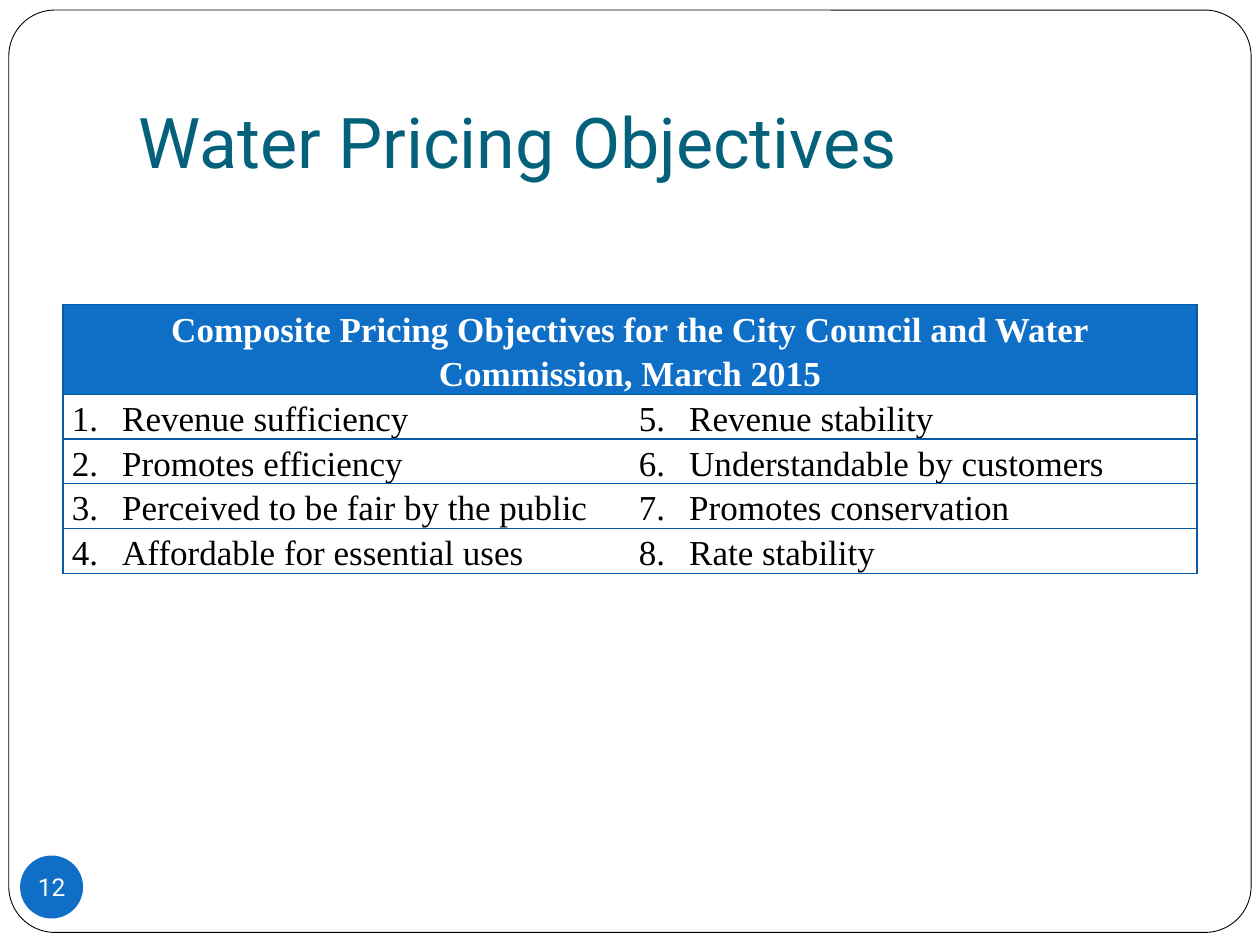
from lxml.etree import SubElement
from pptx import Presentation
from pptx.dml.color import RGBColor
from pptx.enum.shapes import MSO_SHAPE
from pptx.enum.text import MSO_ANCHOR, MSO_AUTO_SIZE, PP_ALIGN
from pptx.oxml.ns import qn
from pptx.util import Inches, Pt

BLUE, BORDER, TEAL, WHITE, BLACK = "0F6FC6", "0559A6", "04617B", "FFFFFF", "000000"
SANS, SERIF = "Roboto", "Times New Roman"
ROW_HEIGHT = 0.355
NUMBER_INDENT = 0.4
HEADING = "Composite Pricing Objectives for the City Council and Water Commission, March 2015"
OBJECTIVES = [
    ["Revenue sufficiency", "Promotes efficiency",
     "Perceived to be fair by the public", "Affordable for essential uses"],
    ["Revenue stability", "Understandable by customers",
     "Promotes conservation", "Rate stability"],
]


def color(hex_string):
    return RGBColor.from_string(hex_string)


def add_run(paragraph, text, font, size, hex_string, bold=False):
    run = paragraph.add_run()
    run.text = text
    run.font.name = font
    run.font.size = Pt(size)
    run.font.bold = bold
    run.font.color.rgb = color(hex_string)


def set_margins(target, left, top, right, bottom):
    """Set the inner margins of a text frame or a table cell, in inches."""
    target.margin_left, target.margin_top = Inches(left), Inches(top)
    target.margin_right, target.margin_bottom = Inches(right), Inches(bottom)


def add_filled_shape(slide, kind, box, fill):
    shape = slide.shapes.add_shape(kind, *map(Inches, box))
    shape.shadow.inherit = False
    shape.fill.solid()
    shape.fill.fore_color.rgb = color(fill)
    return shape


def add_frame(slide, box):
    """Draw the rounded page border behind the title."""
    frame = add_filled_shape(slide, MSO_SHAPE.ROUNDED_RECTANGLE, box, WHITE)
    frame.adjustments[0] = 0.05
    frame.line.color.rgb = color(BLACK)
    frame.line.width = Pt(0.5)
    slide.shapes.title.element.addprevious(frame.element)


def place_title(slide, box, text):
    title = slide.shapes.title
    title.left, title.top, title.width, title.height = map(Inches, box)
    text_frame = title.text_frame
    text_frame.auto_size = MSO_AUTO_SIZE.NONE
    text_frame.word_wrap = True
    text_frame.vertical_anchor = MSO_ANCHOR.BOTTOM
    set_margins(text_frame, 0.1, 0.05, 0.1, 0.1)
    paragraph = text_frame.paragraphs[0]
    paragraph.alignment = PP_ALIGN.LEFT
    add_run(paragraph, text, SANS, 40, TEAL)


def set_borders(cell, visible_sides):
    properties = cell._tc.get_or_add_tcPr()
    for side in "LRTB":
        line = SubElement(properties, qn(f"a:ln{side}"), w=str(Pt(0.75)))
        if side in visible_sides:
            fill = SubElement(line, qn("a:solidFill"))
            SubElement(fill, qn("a:srgbClr"), val=BORDER)
        else:
            SubElement(line, qn("a:noFill"))


def number_paragraph(paragraph, number):
    """Give the paragraph an automatic number and a hanging indent."""
    properties = paragraph._p.get_or_add_pPr()
    properties.set("marL", str(Inches(NUMBER_INDENT)))
    properties.set("indent", str(-Inches(NUMBER_INDENT)))
    SubElement(properties, qn("a:buFont"), typeface="+mj-lt")
    SubElement(properties, qn("a:buAutoNum"), type="arabicPeriod", startAt=str(number))


def format_cell(cell, fill, borders):
    set_margins(cell, 0.07, 0, 0.07, 0)
    set_borders(cell, borders)
    cell.fill.solid()
    cell.fill.fore_color.rgb = color(fill)
    paragraph = cell.text_frame.paragraphs[0]
    paragraph.line_spacing = 1.15
    return paragraph


def add_objectives_table(slide, left, top, width):
    """Place a two-line heading row over two columns of numbered objectives."""
    column_count, item_count = len(OBJECTIVES), len(OBJECTIVES[0])
    table = slide.shapes.add_table(
        item_count + 1, column_count, Inches(left), Inches(top),
        Inches(width), Inches(ROW_HEIGHT * (item_count + 2))).table
    for index, row in enumerate(table.rows):
        row.height = Inches(ROW_HEIGHT * (1 if index else 2))

    for cell in table.rows[0].cells:
        paragraph = format_cell(cell, BLUE, "LRTB")
    table.cell(0, 0).merge(table.cell(0, column_count - 1))
    heading = table.cell(0, 0).text_frame.paragraphs[0]
    heading.alignment = PP_ALIGN.CENTER
    add_run(heading, HEADING, SERIF, 20, WHITE, bold=True)

    for column, items in enumerate(OBJECTIVES):
        outer_side = "R" if column else "L"
        for row, item in enumerate(items, start=1):
            cell = table.cell(row, column)
            paragraph = format_cell(cell, WHITE, outer_side + "TB")
            cell.vertical_anchor = MSO_ANCHOR.BOTTOM if column else MSO_ANCHOR.TOP
            number_paragraph(paragraph, column * item_count + row)
            add_run(paragraph, item, SERIF, 20, BLACK)


def add_page_number(slide, box, number):
    badge = add_filled_shape(slide, MSO_SHAPE.OVAL, box, BLUE)
    badge.line.fill.background()
    text_frame = badge.text_frame
    text_frame.word_wrap = False
    text_frame.vertical_anchor = MSO_ANCHOR.MIDDLE
    set_margins(text_frame, 0, 0, 0, 0)
    paragraph = text_frame.paragraphs[0]
    paragraph.alignment = PP_ALIGN.CENTER
    add_run(paragraph, str(number), SANS, 14, WHITE)


def main():
    presentation = Presentation()
    presentation.slide_width, presentation.slide_height = Inches(10), Inches(7.5)
    slide = presentation.slides.add_slide(presentation.slide_layouts.get_by_name("Title Only"))
    add_frame(slide, (0.07, 0.08, 9.86, 7.32))
    place_title(slide, (1, 0.3, 8.5, 1.25), "Water Pricing Objectives")
    add_objectives_table(slide, 0.5, 2.42, 9)
    add_page_number(slide, (0.16, 6.79, 0.5, 0.5), 12)
    presentation.save("out.pptx")


if __name__ == "__main__":
    main()
